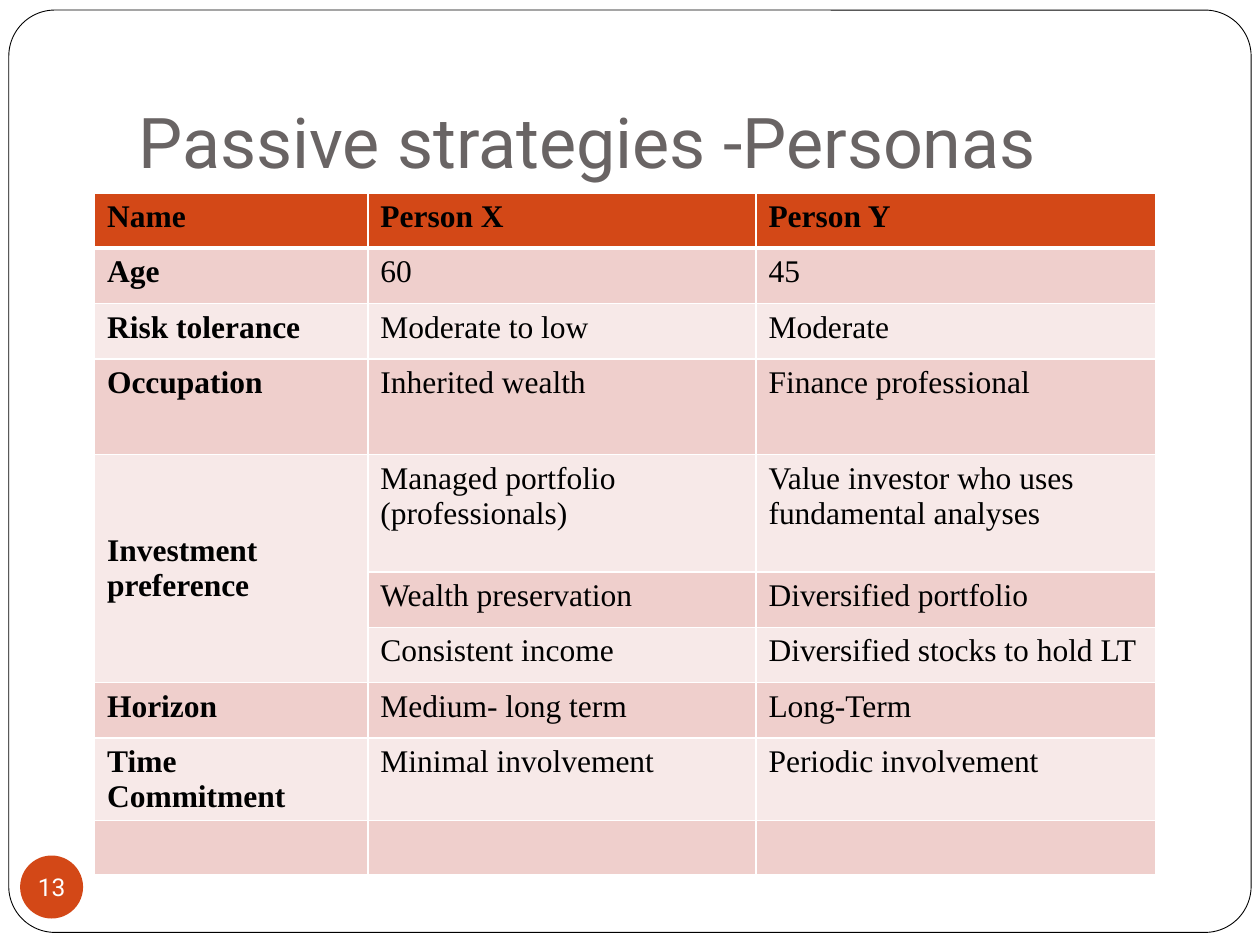
from lxml.etree import SubElement
from pptx import Presentation
from pptx.dml.color import RGBColor
from pptx.enum.shapes import MSO_SHAPE
from pptx.enum.text import MSO_ANCHOR, MSO_AUTO_SIZE, PP_ALIGN
from pptx.oxml.ns import qn
from pptx.util import Inches, Pt

COLORS = {
    "white": "FFFFFF",
    "black": "000000",
    "title": "696464",
    "accent": "D34817",
    "band_dark": "EFCFCC",
    "band_light": "F7E9E8",
}
HEADING_FONT = "Roboto"
TABLE_FONT = "Times New Roman"
COLUMN_WIDTHS = [2.17, 3.08, 3.17]
ROW_HEIGHTS = [0.44, 0.44, 0.44, 0.76, 0.93, 0.44, 0.44, 0.44, 0.65, 0.43]
PERSONAS = [
    ("Name", "Person X", "Person Y"),
    ("Age", "60", "45"),
    ("Risk tolerance", "Moderate to low", "Moderate"),
    ("Occupation", "Inherited wealth", "Finance professional"),
    ("Investment preference", "Managed portfolio (professionals)",
     "Value investor who uses fundamental analyses"),
    ("", "Wealth preservation", "Diversified portfolio"),
    ("", "Consistent income", "Diversified stocks to hold LT"),
    ("Horizon", "Medium- long term", "Long-Term"),
    ("Time Commitment", "Minimal involvement", "Periodic involvement"),
    ("", "", ""),
]
PREFERENCE_ROWS = (4, 6)


def color(name):
    return RGBColor.from_string(COLORS[name])


def add_text(para, text, font, size, color_name, bold=False):
    span = para.add_run()
    span.text = text
    span.font.name = font
    span.font.size = Pt(size)
    span.font.bold = bold
    span.font.color.rgb = color(color_name)


def set_insets(frame, left, top, right, bottom):
    frame.margin_left = Inches(left)
    frame.margin_top = Inches(top)
    frame.margin_right = Inches(right)
    frame.margin_bottom = Inches(bottom)


def add_filled_shape(page, kind, left, top, width, height, fill):
    shape = page.shapes.add_shape(
        kind, Inches(left), Inches(top), Inches(width), Inches(height))
    shape.shadow.inherit = False
    shape.fill.solid()
    shape.fill.fore_color.rgb = color(fill)
    shape.line.fill.background()
    return shape


def add_page_frame(page):
    frame = add_filled_shape(
        page, MSO_SHAPE.ROUNDED_RECTANGLE, 0.07, 0.08, 9.86, 7.32, "white")
    frame.adjustments[0] = 0.05
    frame.line.color.rgb = color("black")
    frame.line.width = Pt(0.5)
    page.shapes._spTree.insert(2, frame._element)


def add_title(page, text):
    title = page.shapes.title
    title.left, title.top = Inches(1), Inches(0.3)
    title.width, title.height = Inches(8.5), Inches(1.25)
    frame = title.text_frame
    frame.auto_size = MSO_AUTO_SIZE.NONE
    frame.vertical_anchor = MSO_ANCHOR.BOTTOM
    set_insets(frame, 0.1, 0.05, 0.1, 0.1)
    para = frame.paragraphs[0]
    para.alignment = PP_ALIGN.LEFT
    add_text(para, text, HEADING_FONT, 40, "title")


def add_page_number(page, number):
    badge = add_filled_shape(page, MSO_SHAPE.OVAL, 0.16, 6.79, 0.5, 0.5, "accent")
    frame = badge.text_frame
    frame.word_wrap = False
    frame.vertical_anchor = MSO_ANCHOR.MIDDLE
    set_insets(frame, 0, 0, 0, 0)
    para = frame.paragraphs[0]
    para.alignment = PP_ALIGN.CENTER
    add_text(para, number, HEADING_FONT, 14, "white")


def set_borders(cell, widths):
    properties = cell._tc.get_or_add_tcPr()
    for position, (side, width) in enumerate(widths.items()):
        line = SubElement(properties, qn(f"a:ln{side}"), w=str(Pt(width)))
        fill = SubElement(line, qn("a:solidFill"))
        SubElement(fill, qn("a:srgbClr"), val=COLORS["white"])
        properties.insert(position, line)


def row_fill(row):
    if row == 0:
        return "accent"
    return "band_dark" if row % 2 else "band_light"


def format_cell(cell, row, column, text):
    cell.fill.solid()
    cell.fill.fore_color.rgb = color(row_fill(row))
    set_borders(cell, {"L": 1, "R": 1, "T": 3 if row == 1 else 1,
                       "B": 3 if row == 0 else 1})
    if text:
        add_text(cell.text_frame.paragraphs[0], text, TABLE_FONT, 18, "black",
                 bold=row == 0 or column == 0)


def add_persona_table(page):
    table = page.shapes.add_table(
        len(PERSONAS), len(COLUMN_WIDTHS), Inches(0.75), Inches(1.53),
        Inches(sum(COLUMN_WIDTHS)), Inches(sum(ROW_HEIGHTS))).table
    table.horz_banding = False
    for column, width in zip(table.columns, COLUMN_WIDTHS):
        column.width = Inches(width)
    for row, height in zip(table.rows, ROW_HEIGHTS):
        row.height = Inches(height)
    for row, texts in enumerate(PERSONAS):
        for column, text in enumerate(texts):
            format_cell(table.cell(row, column), row, column, text)
    first, last = PREFERENCE_ROWS
    preference = table.cell(first, 0)
    preference.merge(table.cell(last, 0))
    preference.vertical_anchor = MSO_ANCHOR.MIDDLE


def main():
    deck = Presentation()
    deck.slide_width, deck.slide_height = Inches(10), Inches(7.5)
    page = deck.slides.add_slide(deck.slide_layouts[5])
    add_page_frame(page)
    add_title(page, "Passive strategies -Personas")
    add_page_number(page, "13")
    add_persona_table(page)
    deck.save("out.pptx")


if __name__ == "__main__":
    main()
